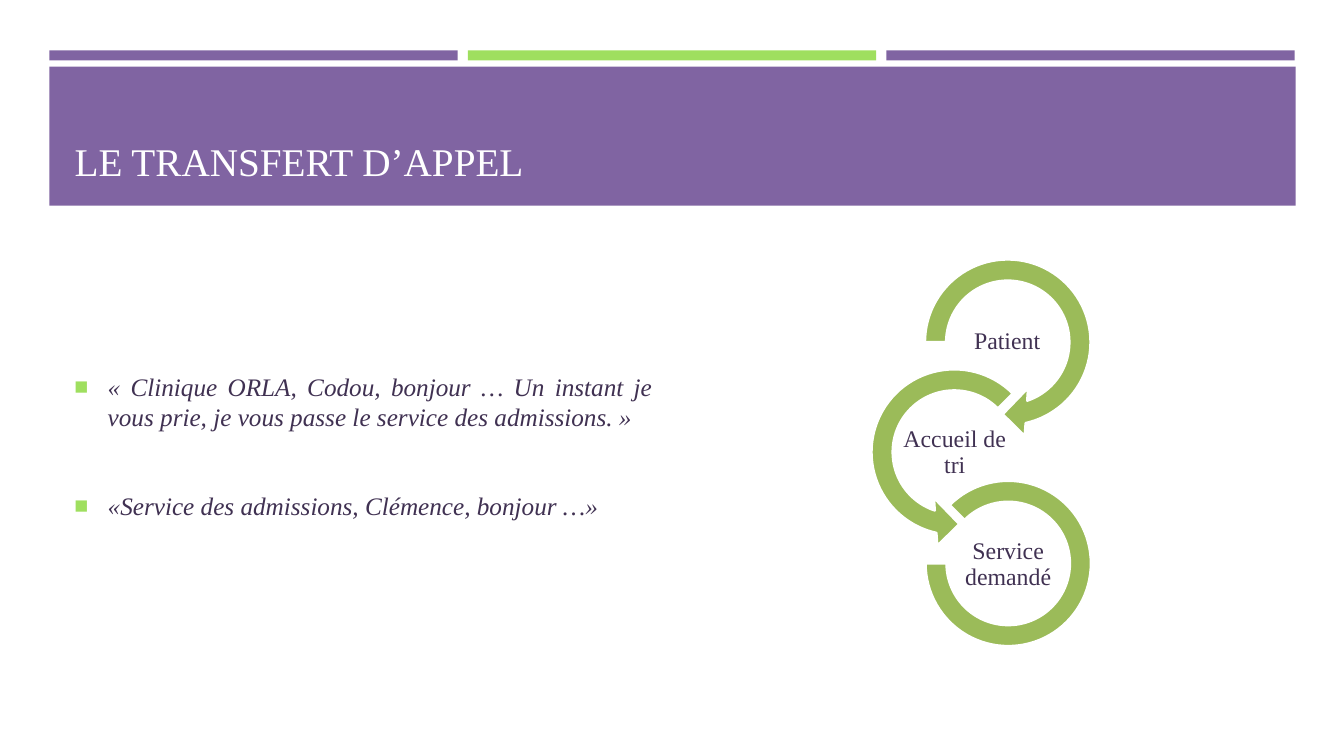
from dataclasses import dataclass

from lxml.etree import SubElement
from pptx import Presentation
from pptx.dml.color import RGBColor
from pptx.enum.shapes import MSO_AUTO_SHAPE_TYPE as ShapeType
from pptx.enum.text import MSO_ANCHOR as Anchor, MSO_AUTO_SIZE as AutoSize, PP_ALIGN as Align
from pptx.oxml.ns import qn
from pptx.util import Inches, Pt

FONT = "Times New Roman"
COLORS = {
    "purple": "8064A2",
    "lime": "9FDF5F",
    "olive": "9BBB59",
    "white": "FFFFFF",
    "text": "403152",
}
QUOTES = [
    "« Clinique ORLA, Codou, bonjour … Un instant je vous prie, je vous passe le service des admissions. »",
    "«Service des admissions, Clémence, bonjour …»",
]


@dataclass
class Box:
    left: float
    top: float
    width: float
    height: float

    def lengths(self) -> list:
        return [Inches(value) for value in (self.left, self.top, self.width, self.height)]


@dataclass
class Step:
    label: str
    label_box: Box
    shape_type: ShapeType
    shape_box: Box
    adjustments: tuple


STEPS = [
    Step("Patient", Box(9.46, 3.13, 1.06, 0.53), ShapeType.CIRCULAR_ARROW,
         Box(9.04, 2.44, 1.91, 1.91), (0.11, 11.42, 45, 108, 0.125)),
    Step("Accueil de tri", Box(8.94, 4.23, 1.06, 0.53), ShapeType.LEFT_CIRCULAR_ARROW,
         Box(8.51, 3.53, 1.91, 1.91), (0.11, 11.42, 63, 189, 0.125)),
    Step("Service demandé", Box(9.47, 5.34, 1.06, 0.53), ShapeType.BLOCK_ARC,
         Box(9.18, 4.77, 1.64, 1.64), (135, 108, 0.127)),
]


def color(name: str) -> RGBColor:
    return RGBColor.from_string(COLORS[name])


def add_filled_shape(slide, shape_type: ShapeType, box: Box, fill: str):
    """Add a preset shape with a plain fill and no outline."""
    shape = slide.shapes.add_shape(shape_type, *box.lengths())
    shape.shadow.inherit = False
    shape.fill.solid()
    shape.fill.fore_color.rgb = color(fill)
    shape.line.fill.background()
    return shape


def format_font(paragraph, size: float, name: str, italic: bool = False) -> None:
    """Format every run of a paragraph."""
    for run in paragraph.runs:
        run.font.name = FONT
        run.font.size = Pt(size)
        run.font.italic = italic
        run.font.color.rgb = color(name)


def add_bullet(paragraph) -> None:
    """Give a paragraph a hanging lime square bullet."""
    properties = paragraph._p.get_or_add_pPr()
    properties.set("marL", str(Inches(0.33)))
    properties.set("indent", str(-Inches(0.33)))
    bullet_color = SubElement(properties, qn("a:buClr"))
    SubElement(bullet_color, qn("a:srgbClr"), val=COLORS["lime"])
    SubElement(properties, qn("a:buSzPct"), val="92000")
    SubElement(properties, qn("a:buFont"), typeface=FONT)
    SubElement(properties, qn("a:buChar"), char="■")


def add_header(slide) -> None:
    """Draw the three stripes and the title band."""
    for index, fill in enumerate(("purple", "lime", "purple")):
        add_filled_shape(slide, ShapeType.RECTANGLE, Box(0.49 + 4.15 * index, 0.5, 4.05, 0.1), fill)
    add_filled_shape(slide, ShapeType.RECTANGLE, Box(0.49, 0.66, 12.36, 1.38), "purple")


def add_title(slide) -> None:
    """Place the title placeholder over the band."""
    title = slide.shapes.title
    title.left, title.top, title.width, title.height = Box(0.64, 0.8, 12.06, 1.08).lengths()
    slide.shapes._spTree.append(title._element)
    frame = title.text_frame
    frame.text = "LE TRANSFERT D’APPEL"
    frame.auto_size = AutoSize.NONE
    frame.vertical_anchor = Anchor.BOTTOM
    frame.paragraphs[0].alignment = Align.LEFT
    format_font(frame.paragraphs[0], 28, "white")


def add_quotes(slide) -> None:
    """Write the bulleted call phrases."""
    frame = slide.shapes.add_textbox(*Box(0.64, 2.44, 5.93, 3.97).lengths()).text_frame
    frame.word_wrap = True
    frame.vertical_anchor = Anchor.MIDDLE
    frame.text = "\n".join(QUOTES)
    for index, paragraph in enumerate(frame.paragraphs):
        paragraph.alignment = Align.JUSTIFY
        if index:
            paragraph.space_before = Pt(42)
        add_bullet(paragraph)
        format_font(paragraph, 18, "text", italic=True)


def add_step(slide, step: Step) -> None:
    """Draw one ring of the transfer chain with its label."""
    ring = add_filled_shape(slide, step.shape_type, step.shape_box, "olive")
    ring.line.color.rgb = color("white")
    ring.line.width = Pt(1.75)
    for index, value in enumerate(step.adjustments):
        ring.adjustments[index] = value
    frame = slide.shapes.add_textbox(*step.label_box.lengths()).text_frame
    frame.word_wrap = True
    frame.vertical_anchor = Anchor.MIDDLE
    frame.margin_left = frame.margin_right = Inches(0.01)
    frame.margin_top = frame.margin_bottom = Inches(0.01)
    frame.text = step.label
    paragraph = frame.paragraphs[0]
    paragraph.alignment = Align.CENTER
    paragraph.line_spacing = 0.9
    format_font(paragraph, 17, "text")


def main() -> None:
    presentation = Presentation()
    presentation.slide_width = Inches(13.33)
    presentation.slide_height = Inches(7.5)
    slide = presentation.slides.add_slide(presentation.slide_layouts[5])
    add_header(slide)
    add_title(slide)
    add_quotes(slide)
    for step in STEPS:
        add_step(slide, step)
    presentation.save("out.pptx")


if __name__ == "__main__":
    main()
